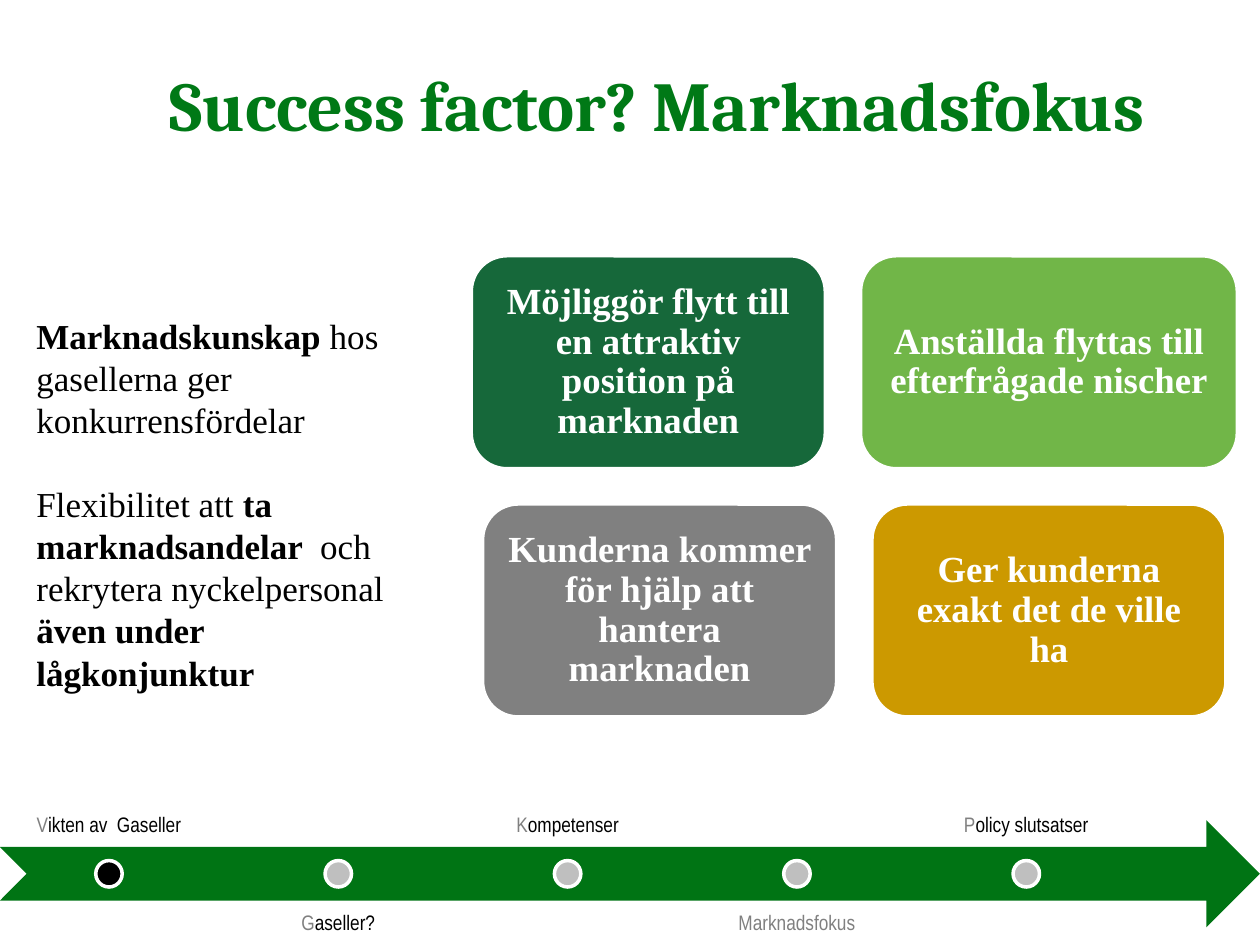
from pptx import Presentation
from pptx.dml.color import RGBColor
from pptx.enum.shapes import MSO_SHAPE as Shape
from pptx.enum.text import MSO_ANCHOR as Anchor, PP_ALIGN as Align
from pptx.util import Inches, Pt

COLORS = {
    "title": "007916", "arrow": "007414", "dark_green": "16683A",
    "light_green": "71B648", "gray": "808080", "gold": "CC9900",
    "silver": "BFBFBF", "black": "000000", "white": "FFFFFF",
}


def rgb(name):
    return RGBColor.from_string(COLORS[name])


def add_filled(kind, left, top, width, height, fill, outlined=True):
    shape = slide.shapes.add_shape(
        kind, Inches(left), Inches(top), Inches(width), Inches(height))
    shape.shadow.inherit = False
    shape.fill.solid()
    shape.fill.fore_color.rgb = rgb(fill)
    if outlined:
        shape.line.color.rgb = rgb("white")
        shape.line.width = Pt(2)
    else:
        shape.line.fill.background()
    return shape


presentation = Presentation()
presentation.slide_width = Inches(10)
presentation.slide_height = Inches(7.5)
slide = presentation.slides.add_slide(presentation.slide_layouts[6])

# Title
title = slide.shapes.add_textbox(Inches(0.43), Inches(0.47), Inches(9.57), Inches(0.71))
title.text_frame.word_wrap = True
title.text_frame.vertical_anchor = Anchor.MIDDLE
paragraph = title.text_frame.paragraphs[0]
paragraph.text = "Success factor? Marknadsfokus"
paragraph.alignment = Align.CENTER
paragraph.font.name = "Cambria"
paragraph.font.size = Pt(40)
paragraph.font.bold = True
paragraph.font.color.rgb = rgb("title")

# Timeline arrow
add_filled(Shape.NOTCHED_RIGHT_ARROW, 0, 6.51, 10, 0.85, "arrow", outlined=False)

# Timeline stops: labels alternate above and below the arrow
stops = [("V", "ikten av  Gaseller"), ("G", "aseller?"), ("K", "ompetenser"),
         ("Marknadsfokus", ""), ("P", "olicy slutsatser")]
stop_pitch = 1.82
for index, (gray_text, black_text) in enumerate(stops):
    left = index * stop_pitch
    above = index % 2 == 0
    label = slide.shapes.add_textbox(
        Inches(left), Inches(5.88 if above else 7.15), Inches(1.73), Inches(0.85))
    frame = label.text_frame
    frame.word_wrap = True
    frame.vertical_anchor = Anchor.BOTTOM if above else Anchor.TOP
    frame.margin_left = frame.margin_right = Inches(0.09)
    frame.margin_top = frame.margin_bottom = Inches(0.09)
    paragraph = frame.paragraphs[0]
    paragraph.alignment = Align.CENTER
    paragraph.line_spacing = 0.9
    paragraph.font.name = "Arial Narrow"
    paragraph.font.size = Pt(12)
    for text, color in ((gray_text, "gray"), (black_text, "black")):
        if text:
            run = paragraph.add_run()
            run.text = text
            run.font.color.rgb = rgb(color)
    add_filled(Shape.OVAL, left + 0.76, 6.83, 0.21, 0.21,
               "black" if index == 0 else "silver")

# Body text on the left: (text, bold) runs
body_paragraphs = [
    [("Marknadskunskap ", True), ("hos gasellerna ger konkurrensfördelar", False)],
    [("Flexibilitet att ", False), ("ta marknadsandelar  ", True),
     ("och rekrytera nyckelpersonal ", False), ("även under lågkonjunktur", True)],
]
body = slide.shapes.add_textbox(Inches(0.19), Inches(2.45), Inches(3.21), Inches(3.13))
frame = body.text_frame
frame.word_wrap = True
for index, runs in enumerate(body_paragraphs):
    paragraph = frame.paragraphs[0] if index == 0 else frame.add_paragraph()
    paragraph.line_spacing = Pt(24)
    paragraph.space_before = Pt(24 * index)
    paragraph.font.name = "Times New Roman"
    paragraph.font.size = Pt(20)
    paragraph.font.color.rgb = rgb("black")
    for text, bold in runs:
        run = paragraph.add_run()
        run.text = text
        run.font.bold = bold

# Four cards: left, top, width, fill, text
cards = [
    (3.74, 2.03, 2.81, "dark_green", "Möjliggör flytt till en attraktiv position på marknaden"),
    (6.83, 2.03, 2.99, "light_green", "Anställda flyttas till efterfrågade nischer"),
    (3.83, 4, 2.81, "gray", "Kunderna kommer för hjälp att hantera marknaden"),
    (6.92, 4, 2.81, "gold", "Ger kunderna exakt det de ville ha"),
]
for left, top, width, fill, text in cards:
    card = add_filled(Shape.ROUNDED_RECTANGLE, left, top, width, 1.69, fill)
    frame = card.text_frame
    frame.word_wrap = True
    frame.vertical_anchor = Anchor.MIDDLE
    frame.margin_left = frame.margin_right = Inches(0.09)
    frame.margin_top = frame.margin_bottom = Inches(0.09)
    paragraph = frame.paragraphs[0]
    paragraph.text = text
    paragraph.alignment = Align.CENTER
    paragraph.line_spacing = 0.9
    paragraph.font.name = "Times New Roman"
    paragraph.font.size = Pt(21)
    paragraph.font.bold = True
    paragraph.font.color.rgb = rgb("white")

presentation.save("out.pptx")
